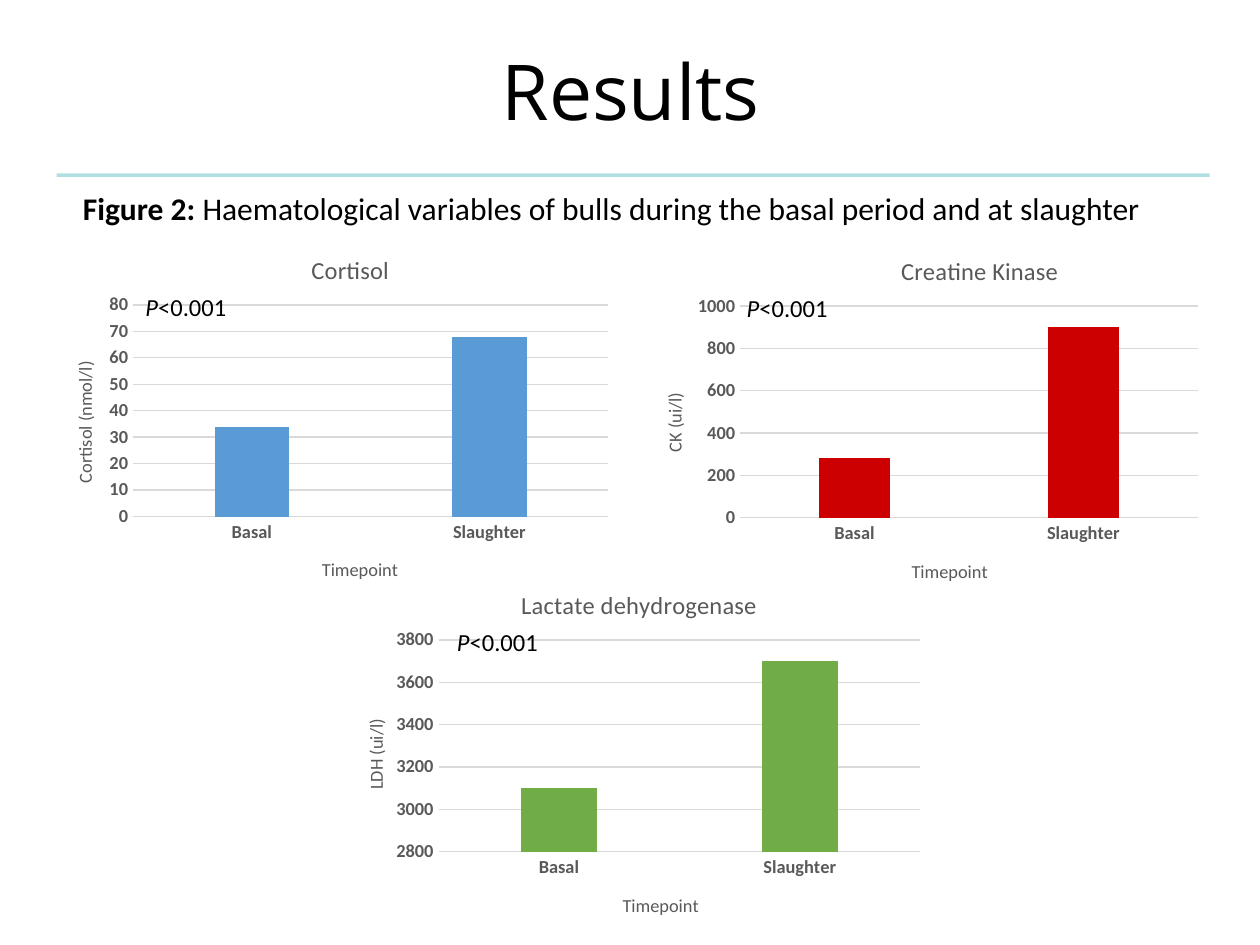
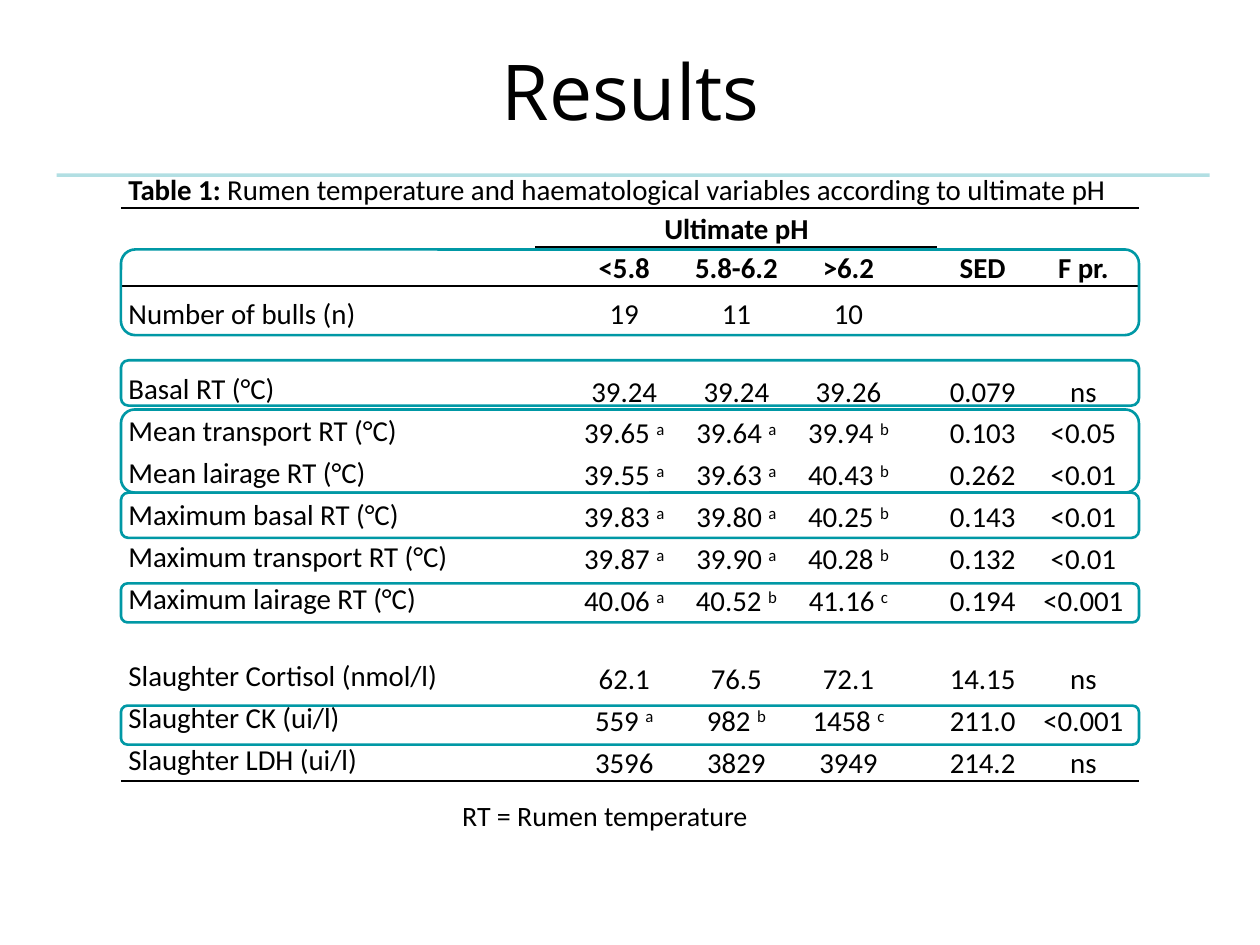
from lxml.etree import SubElement
from pptx import Presentation
from pptx.chart.data import CategoryChartData
from pptx.dml.color import RGBColor
from pptx.enum.chart import XL_CHART_TYPE, XL_TICK_MARK
from pptx.enum.shapes import MSO_CONNECTOR, MSO_SHAPE
from pptx.enum.text import MSO_ANCHOR, PP_ALIGN
from pptx.oxml import parse_xml
from pptx.oxml.ns import nsdecls, qn
from pptx.util import Inches, Pt

BLACK = RGBColor(0x00, 0x00, 0x00)
TEAL = RGBColor(0x00, 0x98, 0xA5)
GREY = RGBColor(0x59, 0x59, 0x59)
PALE = RGBColor(0xD9, 0xD9, 0xD9)
BLUE = RGBColor(0x5B, 0x9B, 0xD5)
RED = RGBColor(0xCC, 0x00, 0x00)
GREEN = RGBColor(0x70, 0xAD, 0x47)
BODY, HEAD = "Calibri", "Open Sans"
COLS, ROWS = 100, 75
UNIT = Inches(0.1)
PLAIN = "{2D5ABB26-0587-4C30-8999-92F81FD0307C}"

CHARTS = [
    dict(box=(3.2, 17.9, 46, 30), name="Cortisol", unit="Cortisol (nmol/l)",
         vals=(34, 68), scale=(0, 80, 10), color=BLUE, head=0.46,
         plot=(0.16, 0.82), side=0.35, note=0.16),
    dict(box=(50, 18, 46, 30), name="Creatine Kinase", unit="CK (ui/l)",
         vals=(280, 900), scale=(0, 1000, 200), color=RED, head=0.46,
         plot=(0.19, 0.79), side=0.43, note=0.18),
    dict(box=(26.2, 44.5, 47.8, 30), name="Lactate dehydrogenase", unit="LDH (ui/l)",
         vals=(3100, 3700), scale=(2800, 3800, 200), color=GREEN, head=0.31,
         plot=(0.18, 0.8), side=0.41, note=0.19),
]

WIDTHS = (32.9, 2.6, 8.9, 8.9, 8.9, 2.6, 7.2, 8.8)
STEP = 10 / 3
HEIGHTS = (6.1, 3.1, 3.1, 3.7, 2.8, *[STEP] * 6, 2.8, *[STEP] * 3)
DATA_COLS = (0, 2, 3, 4, 6, 7)
DATA = {
    2: ("", "<5.8", "5.8-6.2", ">6.2", "SED", "F pr."),
    3: ("Number of bulls (n)", "19", "11", "10", "", ""),
    5: ("Basal RT (°C)", "39.24", "39.24", "39.26", "0.079", "ns"),
    6: ("Mean transport RT (°C)", "39.65 ^a", "39.64 ^a", "39.94 ^b", "0.103", "<0.05"),
    7: ("Mean lairage RT (°C)", "39.55 ^a", "39.63 ^a", "40.43 ^b", "0.262", "<0.01"),
    8: ("Maximum basal RT (°C)", "39.83 ^a", "39.80 ^a", "40.25 ^b", "0.143", "<0.01"),
    9: ("Maximum transport RT (°C)", "39.87 ^a", "39.90 ^a", "40.28 ^b", "0.132", "<0.01"),
    10: ("Maximum lairage RT (°C)", "40.06 ^a", "40.52 ^b", "41.16 ^c", "0.194", "<0.001"),
    12: ("Slaughter Cortisol (nmol/l)", "62.1", "76.5", "72.1", "14.15", "ns"),
    13: ("Slaughter CK (ui/l)", "559 ^a", "982 ^b", "1458 ^c", "211.0", "<0.001"),
    14: ("Slaughter LDH (ui/l)", "3596", "3829", "3949", "214.2", "ns"),
}
RULES = {0: range(8), 1: range(1, 6), 2: range(8), 14: range(8)}
FRAMES = [(9.4, 6.8), (22.1, 6.6), (28.7, 3.6), (18.2, 3.6), (35.9, 3.1), (45.6, 3.1)]


def span(*cells):
    """Turn grid columns and rows into slide lengths."""
    return [round(UNIT * cell) for cell in cells]


def style(font, size, color=BLACK, name=BODY, bold=None):
    """Set the look of a font."""
    font.size, font.name, font.bold = Pt(size), name, bold
    font.color.rgb = color


def add_text(slide, box, parts, size, name=BODY):
    """Place one paragraph of (text, font flag) parts and return its frame."""
    frame = slide.shapes.add_textbox(*span(*box)).text_frame
    frame.word_wrap = True
    para = frame.paragraphs[0]
    style(para.font, size, name=name)
    for text, flag in parts:
        run = para.add_run()
        run.text = text
        if flag:
            setattr(run.font, flag, True)
    return frame


def add_base(deck):
    """Add a slide with the shared title and rule."""
    slide = deck.slides.add_slide(deck.slide_layouts[6])
    rule = slide.shapes.add_connector(MSO_CONNECTOR.STRAIGHT, *span(4.5, 13.9, 96, 13.9))
    rule.line.color.rgb, rule.line.width = TEAL, Pt(2)
    props = rule._element.spPr
    SubElement(next(props.iter(qn("a:srgbClr"))), qn("a:alpha"), val="30000")
    SubElement(props, qn("a:effectLst"))
    frame = add_text(slide, (3.2, 2, 93.7, 11.2), [("Results", None)], 44, HEAD)
    frame.vertical_anchor = MSO_ANCHOR.MIDDLE
    para = frame.paragraphs[0]
    para.alignment, para.line_spacing = PP_ALIGN.CENTER, 0.9
    return slide


def pin(node, index, **shares):
    """Fix a chart part at shares of the chart's size."""
    for old in node.findall(qn("c:layout")):
        node.remove(old)
    layout = parse_xml(f"<c:layout {nsdecls('c')}><c:manualLayout/></c:layout>")
    node.insert(index, layout)
    inner = layout[0]
    if "w" in shares:
        SubElement(inner, qn("c:layoutTarget"), val="inner")
    for key in "xy":
        SubElement(inner, qn(f"c:{key}Mode"), val="edge")
    for key, share in shares.items():
        SubElement(inner, qn(f"c:{key}"), val=str(share))


def label(title, text, size, x, y, turn=0):
    """Write and pin a chart or axis title."""
    frame = title.text_frame
    frame.text = text
    style(frame.paragraphs[0].font, size, GREY, bold=False)
    body = frame._txBody.bodyPr
    body.set("rot", str(turn * 60000))
    body.set("vert", "horz")
    pin(title._element, 1, x=x, y=y)


def add_bars(slide, box, name, unit, vals, scale, color, head, plot, side, note):
    """Draw one column chart and its P value inside the box."""
    data = CategoryChartData()
    data.categories = ["Basal", "Slaughter"]
    data.add_series("Series 1", vals)
    chart = slide.shapes.add_chart(XL_CHART_TYPE.COLUMN_CLUSTERED, *span(*box), data).chart
    style(chart.font, 10)
    chart.has_legend = False
    label(chart.chart_title, name, 14, head, 0.06)
    bars = chart.plots[0]
    bars.gap_width, bars.overlap, bars.vary_by_categories = 219, -27, False
    fill = bars.series[0].format.fill
    fill.solid()
    fill.fore_color.rgb = color
    base, rise = chart.category_axis, chart.value_axis
    for axis in (base, rise):
        axis.major_tick_mark = axis.minor_tick_mark = XL_TICK_MARK.NONE
        style(axis.tick_labels.font, 10.5, GREY, bold=True)
    rise.minimum_scale, rise.maximum_scale, rise.major_unit = scale
    rise.format.line.fill.background()
    rise.has_major_gridlines = True
    for line in (base.format.line, rise.major_gridlines.format.line):
        line.color.rgb, line.width = PALE, Pt(0.75)
    label(base.axis_title, "Timepoint", 10.5, 0.48, 0.87)
    label(rise.axis_title, unit, 10.5, 0.05, side, -90)
    left, width = plot
    pin(chart._chartSpace.chart.plotArea, 0, x=left, y=0.21, w=width, h=0.56)
    x, y, w, h = box
    return x + w * note, y + h * 0.16, 8.9, 3.4


def fill_cell(cell, text, size=16.5, bold=False, middle=False, center=True):
    """Write a cell, raising whatever follows a caret."""
    para = cell.text_frame.paragraphs[0]
    style(para.font, size, bold=bold)
    para.line_spacing = 1.07
    para.alignment = PP_ALIGN.CENTER if center else PP_ALIGN.LEFT
    cell.vertical_anchor = MSO_ANCHOR.MIDDLE if middle else MSO_ANCHOR.BOTTOM
    main, _, mark = text.partition("^")
    if main:
        para.add_run().text = main
    if mark:
        run = para.add_run()
        run.text = mark
        run._r.get_or_add_rPr().set("baseline", "30000")


def add_rule(cell):
    """Draw a thin black line under a cell."""
    line = parse_xml(
        f'<a:lnB {nsdecls("a")} w="12700"><a:solidFill><a:srgbClr val="{BLACK}"/>'
        "</a:solidFill></a:lnB>")
    cell._tc.get_or_add_tcPr().insert(0, line)


def add_grid(slide, box):
    """Draw the table of rumen temperatures and blood values."""
    frame = slide.shapes.add_table(len(HEIGHTS), len(WIDTHS), *span(*box))
    table = frame.table
    table.first_row = table.horz_banding = False
    table._tbl.tblPr.find(qn("a:tableStyleId")).text = PLAIN
    for col, width in zip(table.columns, span(*WIDTHS)):
        col.width = width
    for row, height in zip(table.rows, span(*HEIGHTS)):
        row.height = height
    for cell in table.iter_cells():
        cell.fill.background()
        cell.margin_left = cell.margin_right = Inches(0.06)
        cell.margin_top = cell.margin_bottom = 0
    table.cell(0, 0).merge(table.cell(0, 7))
    table.cell(1, 1).merge(table.cell(1, 5))
    texts = {(row, col): text for row, line in DATA.items()
             for col, text in zip(DATA_COLS, line)}
    texts[0, 0] = "Table 1: "
    texts[1, 1] = "Ultimate pH"
    for row in range(len(HEIGHTS)):
        for col in range(len(WIDTHS)):
            text = texts.get((row, col), "")
            fill_cell(table.cell(row, col), text, 16.5 if text else 10,
                      row in (1, 2), row > 4 and col == 0, col > 0)
    para = table.cell(0, 0).text_frame.paragraphs[0]
    para.runs[0].font.bold = True
    para.add_run().text = "Rumen temperature and haematological variables according to ultimate pH"
    for row, cols in RULES.items():
        for col in cols:
            add_rule(table.cell(row, col))


def add_frames(slide, box):
    """Outline the notable rows of the table in the box."""
    left, top, width, _ = box
    for drop, height in FRAMES:
        frame = slide.shapes.add_shape(
            MSO_SHAPE.ROUNDED_RECTANGLE, *span(left, top + drop, width, height))
        frame.shadow.inherit = False
        frame.fill.background()
        frame.line.color.rgb, frame.line.width = TEAL, Pt(1.5)


def chart_slide(deck):
    """Build the slide of three charts."""
    slide = add_base(deck)
    add_text(slide, (5.6, 14.5, 90, 4), [
        ("Figure 2: ", "bold"),
        ("Haematological variables of bulls during the basal period and at slaughter", None)], 18)
    notes = [add_bars(slide, **chart) for chart in CHARTS]
    for box in notes:
        add_text(slide, box, [("P", "italic"), ("<0.001", None)], 14).word_wrap = False


def table_slide(deck):
    """Build the slide with the table."""
    slide = add_base(deck)
    box = (9.6, 10.4, sum(WIDTHS), sum(HEIGHTS))
    add_grid(slide, box)
    add_frames(slide, box)
    add_text(slide, (35.7, 62.9, 28.6, 3.7), [("RT = Rumen temperature", None)], 16)


def main():
    """Build and save the deck."""
    deck = Presentation()
    deck.slide_width, deck.slide_height = span(COLS, ROWS)
    chart_slide(deck)
    table_slide(deck)
    deck.save("out.pptx")


if __name__ == "__main__":
    main()
